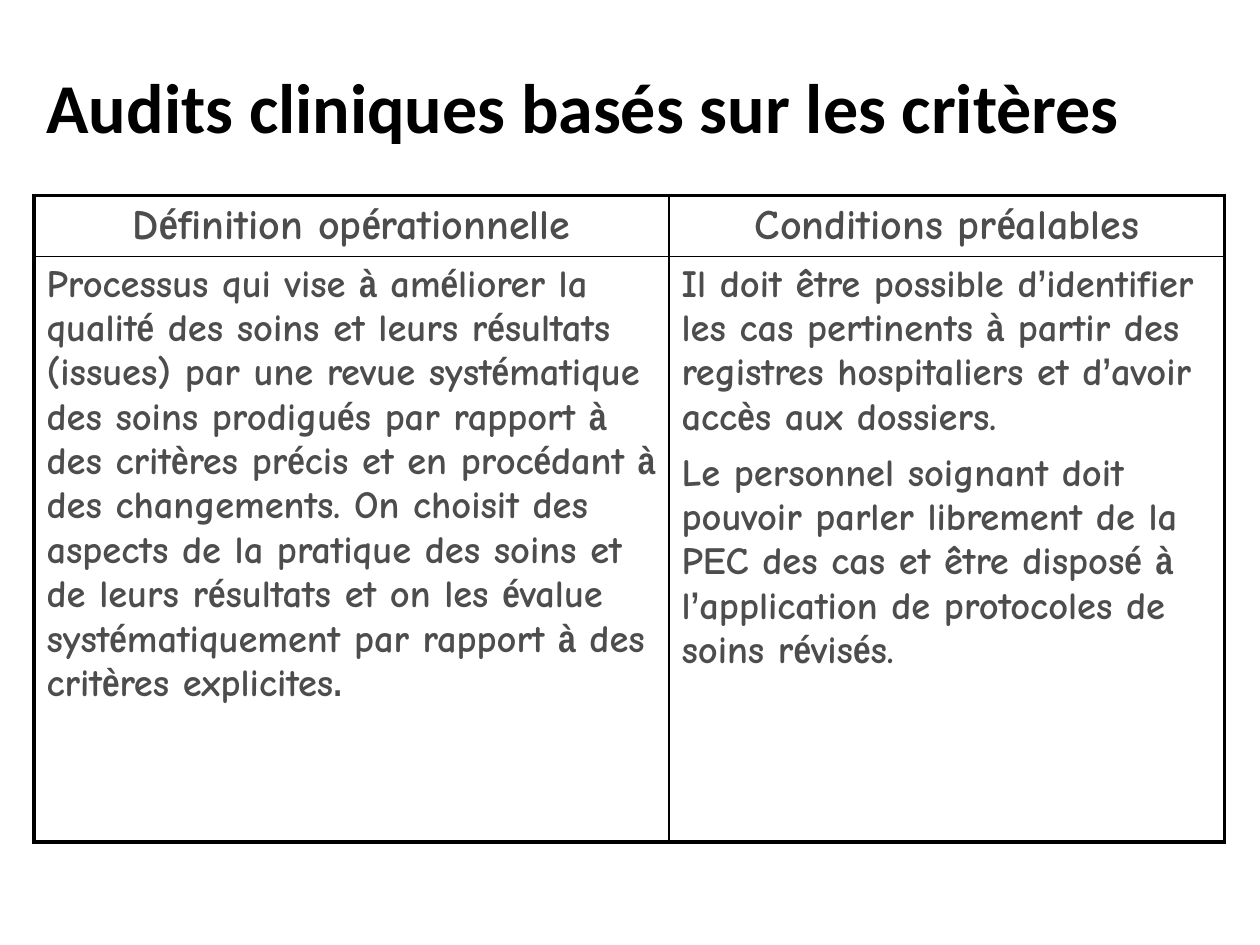
from itertools import groupby
from lxml.etree import SubElement
from pptx import Presentation
from pptx.dml.color import RGBColor
from pptx.enum.text import MSO_ANCHOR, PP_ALIGN
from pptx.oxml.ns import qn
from pptx.util import Inches, Pt

HAND, NARROW = "Comic Neue", "Arial Narrow"
NARROW_CHARS = "éèà’"
HEADINGS = ["Définition opérationnelle", "Conditions préalables"]
BODIES = [
    ["Processus qui vise à améliorer la qualité des soins et leurs résultats (issues) "
     "par une revue systématique des soins prodigués par rapport à des critères précis "
     "et en procédant à des changements. On choisit des aspects de la pratique des soins "
     "et de leurs résultats et on les évalue systématiquement par rapport à des critères "
     "explicites"],
    ["Il doit être possible d’identifier les cas pertinents à partir des registres "
     "hospitaliers et d’avoir accès aux dossiers.",
     "Le personnel soignant doit pouvoir parler librement de la PEC des cas et être "
     "disposé à l’application de protocoles de soins révisés."],
]


def rgb(color):
    """Return the colour of a hex string."""
    return RGBColor.from_string(color)


def add_run(p, text, font, size, color="4D4D4D"):
    """Add one bold run to a paragraph."""
    r = p.add_run()
    r.text = text
    r.font.name, r.font.size, r.font.bold = font, Pt(size), True
    r.font.color.rgb = rgb(color)


def add_title(s, text):
    """Place and write the slide title."""
    sp = s.shapes.title
    sp.left, sp.top, sp.width, sp.height = map(Inches, (0.27, 0.17, 9.45, 1.33))
    tf = sp.text_frame
    tf.vertical_anchor = MSO_ANCHOR.MIDDLE
    p = tf.paragraphs[0]
    p.alignment = PP_ALIGN.JUSTIFY
    add_run(p, text, "Calibri", 40, "000000")


def set_borders(cell, widths, color="000000"):
    """Draw the left, right, top and bottom borders of a cell."""
    tc_pr = cell._tc.get_or_add_tcPr()
    for side, width in zip("LRTB", widths):
        ln = SubElement(tc_pr, qn(f"a:ln{side}"), w=str(Pt(width)))
        fill = SubElement(ln, qn("a:solidFill"))
        SubElement(fill, qn("a:srgbClr"), val=color)


def fill_cell(cell, texts, size, align):
    """Write paragraphs, with accented letters in the narrow font."""
    cell.fill.background()
    tf = cell.text_frame
    for i, text in enumerate(texts):
        p = tf.add_paragraph() if i else tf.paragraphs[0]
        p.alignment = align
        p.space_before, p.space_after = Pt(size * 0.1), Pt(size * 0.2)
        for narrow, chars in groupby(text, lambda c: c in NARROW_CHARS):
            add_run(p, "".join(chars), NARROW if narrow else HAND, size)


def add_audit_table(s):
    """Add the two-column table with a thick frame and thin inner lines."""
    box = map(Inches, (0.27, 1.55, 9.45, 5.1))
    table = s.shapes.add_table(2, 2, *box).table
    table.first_row = table.horz_banding = False
    for col, width in zip(table.columns, (5.04, 4.41)):
        col.width = Inches(width)
    for row, height in zip(table.rows, (0.45, 4.65)):
        row.height = Inches(height)
    thick, thin = 2.25, 1
    for j, (heading, body) in enumerate(zip(HEADINGS, BODIES)):
        sides = (thin, thick) if j else (thick, thin)
        set_borders(table.cell(0, j), (*sides, thick, thin))
        set_borders(table.cell(1, j), (*sides, thin, thick))
        fill_cell(table.cell(0, j), [heading], 24, PP_ALIGN.CENTER)
        fill_cell(table.cell(1, j), body, 22, PP_ALIGN.LEFT)
    add_run(table.cell(1, 0).text_frame.paragraphs[0], ".", NARROW, 22)


def main():
    """Build and save the slide."""
    prs = Presentation()
    prs.slide_width, prs.slide_height = Inches(10), Inches(7.5)
    s = prs.slides.add_slide(prs.slide_layouts[5])
    add_title(s, "Audits cliniques basés sur les critères")
    add_audit_table(s)
    prs.save("out.pptx")


if __name__ == "__main__":
    main()
